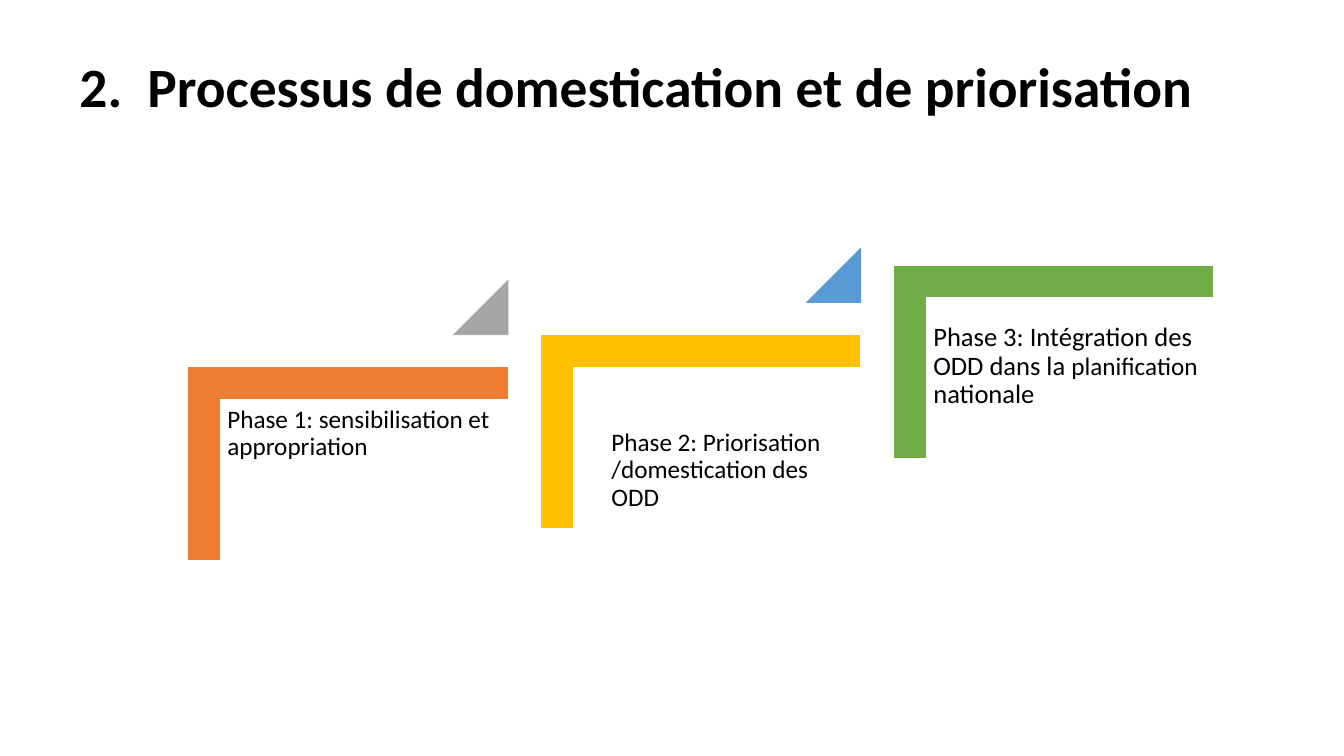
from pptx import Presentation
from pptx.dml.color import RGBColor
from pptx.enum.shapes import MSO_SHAPE as Preset
from pptx.enum.text import MSO_ANCHOR as Anchor
from pptx.util import Pt

COLORS = {
    "text": "000000",
    "orange": "ED7D31",
    "gray": "A5A5A5",
    "yellow": "FFC000",
    "blue": "5B9BD5",
    "green": "70AD47",
}

presentation = Presentation()
presentation.slide_width = Pt(960)
presentation.slide_height = Pt(540)
slide = presentation.slides.add_slide(presentation.slide_layouts[6])


def add_text(box, runs, inset=None, bold=False, anchor=Anchor.TOP):
    frame = slide.shapes.add_textbox(*[Pt(value) for value in box]).text_frame
    frame.word_wrap = True
    frame.vertical_anchor = anchor
    if inset is not None:
        frame.margin_left = frame.margin_right = Pt(inset)
        frame.margin_top = frame.margin_bottom = Pt(inset)
    paragraph = frame.paragraphs[0]
    paragraph.line_spacing = 0.9
    for text, size in runs:
        run = paragraph.add_run()
        run.text = text
        run.font.name = "Calibri"
        run.font.size = Pt(size)
        run.font.bold = bold
        run.font.color.rgb = RGBColor.from_string(COLORS["text"])


def add_preset(preset, box, color, adjustments):
    shape = slide.shapes.add_shape(preset, *[Pt(value) for value in box])
    shape.shadow.inherit = False
    shape.fill.solid()
    shape.fill.fore_color.rgb = RGBColor.from_string(COLORS[color])
    shape.line.color.rgb = RGBColor.from_string(COLORS[color])
    shape.line.width = Pt(0.5)
    for index, value in enumerate(adjustments):
        shape.adjustments[index] = value
    return shape


add_text(
    (49.7, 25.2, 868.3, 77.8),
    [("2.  Processus de domestication et de priorisation", 39.6)],
    bold=True,
    anchor=Anchor.MIDDLE,
)

phases = [
    ("orange", 217.4, (157, 285.1, 205.9, 180), 5.4,
     [("Phase 1: sensibilisation et appropriation", 18)], "gray"),
    ("yellow", 194.4, (431.3, 301.7, 162, 102.2), 5.4,
     [("Phase 2: Priorisation /domestication des ODD", 18)], "blue"),
    ("green", 144.7, (661, 225.4, 205.9, 154.8), 5.7,
     [("Phase 3: Intégration des ODD dans la ", 19), ("planification", 18),
      (" nationale", 19)], None),
]

for number, (color, top, text_box, inset, runs, step_color) in enumerate(phases):
    left = 180 + 252 * number
    corner = add_preset(Preset.CORNER, (left, top, 136.8, 227.5), color, [0.161, 0.161])
    corner.rotation = 90
    add_text(text_box, runs, inset)
    if step_color:
        add_preset(Preset.ISOSCELES_TRIANGLE, (left + 144, top - 17.2, 38.9, 38.9),
                   step_color, [1])

presentation.save("out.pptx")
